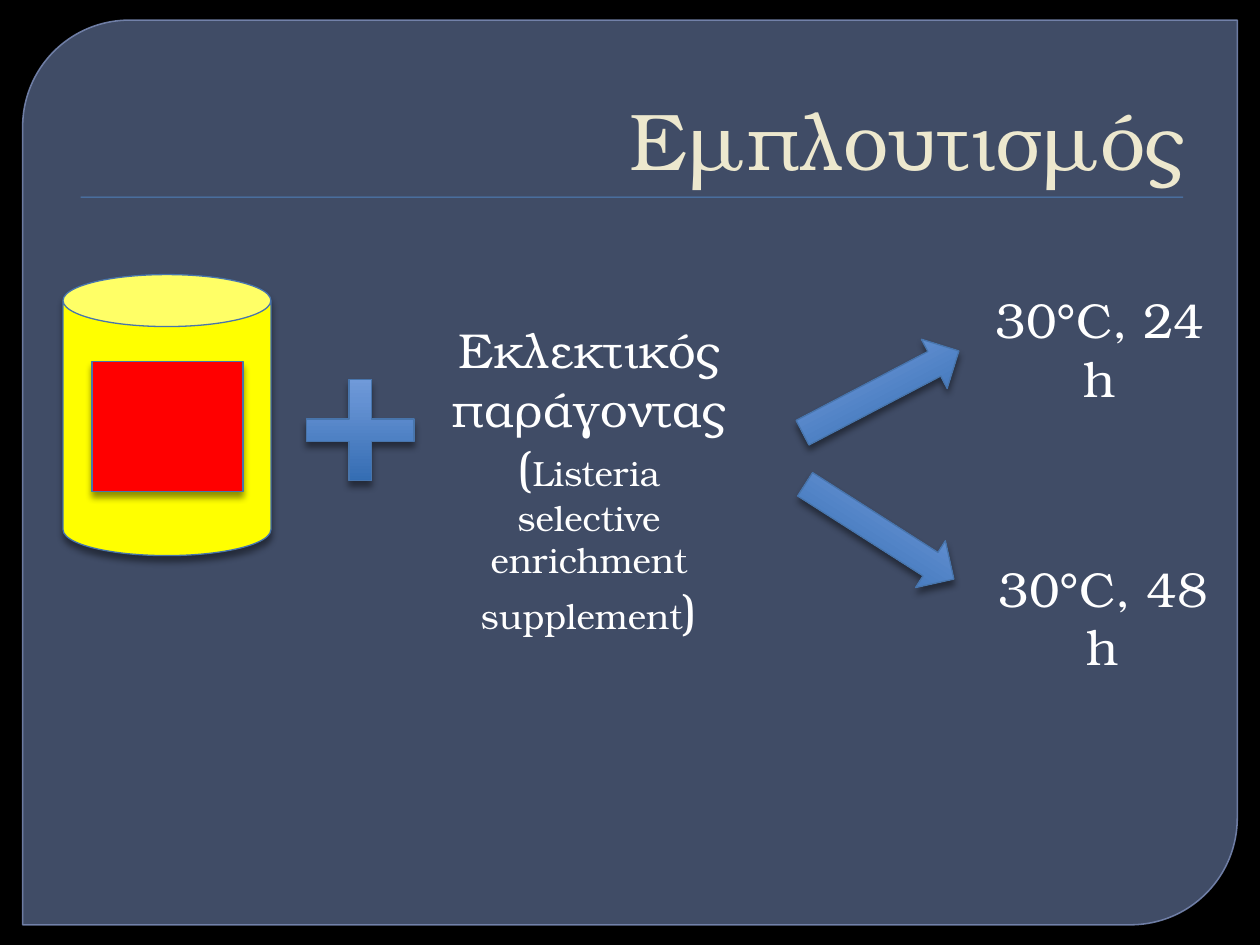
"""Build the enrichment slide: sample plus selective agent, incubated for 24 or 48 hours."""
from lxml import etree
from pptx import Presentation
from pptx.dml.color import RGBColor
from pptx.enum.shapes import MSO_SHAPE
from pptx.enum.text import MSO_ANCHOR, MSO_AUTO_SIZE, PP_ALIGN
from pptx.oxml import parse_xml
from pptx.oxml.ns import nsdecls, qn
from pptx.util import Inches, Pt

CAN, PLUS, ARROW = MSO_SHAPE.CAN, MSO_SHAPE.MATH_PLUS, MSO_SHAPE.RIGHT_ARROW
RECTANGLE, PANEL = MSO_SHAPE.RECTANGLE, MSO_SHAPE.ROUND_2_DIAG_RECTANGLE
CENTER, RIGHT = PP_ALIGN.CENTER, PP_ALIGN.RIGHT
BOTTOM, TOP = MSO_ANCHOR.BOTTOM, MSO_ANCHOR.TOP
FIT_SHAPE, FIT_NONE = MSO_AUTO_SIZE.SHAPE_TO_FIT_TEXT, MSO_AUTO_SIZE.NONE

FONT = "TeX Gyre Bonum"
COLORS = {
    "background": "000000", "panel": "63759D", "panel_line": "7989B3", "rule": "4F81BD",
    "title": "EDE8CE", "text": "FFFFFF", "outline": "4875AC", "shadow": "000000",
    "jar": "FFFF00", "sample": "FF0000",
}
GRADIENT = [(0, "2964AB"), (72, "6592D3"), (100, "7BA1DE")]
TITLE = "Εμπλουτισμός"
LABELS = [
    ((7.8, 2.25, 1.86, 0.57), [("30°C, 24 h", 28)]),
    ((7.74, 4.38, 2.03, 0.57), [("30°C, 48 h", 28)]),
    ((3.44, 2.49, 2.47, 2.32), [
        ("Εκλεκτικός παράγοντας (", 28),
        ("Listeria selective enrichment supplement", 20),
        (")", 28),
    ]),
]
JAR_PARTS = [
    (CAN, (0.5, 2.18, 1.65, 2.23), "jar"),
    (RECTANGLE, (0.73, 2.87, 1.2, 1.03), "sample"),
]
SYMBOLS = [
    (ARROW, (6.29, 2.89, 1.4, 0.44), 332.4),
    (ARROW, (6.28, 4, 1.4, 0.44), 32.5),
    (PLUS, (2.28, 2.87, 1.16, 1.09), 0),
]


def color(name):
    return RGBColor.from_string(COLORS[name])


def set_alpha(fill_element, percent):
    hue = fill_element.find(".//" + qn("a:srgbClr"))
    etree.SubElement(hue, qn("a:alpha")).set("val", str(percent * 1000))


def add_shape(shapes, kind, box, fill, line=None, width=0.75):
    shape = shapes.add_shape(kind, *map(Inches, box))
    shape.fill.solid()
    shape.fill.fore_color.rgb = color(fill)
    if line:
        shape.line.color.rgb = color(line)
        shape.line.width = Pt(width)
    else:
        shape.line.fill.background()
    shape.shadow.inherit = False
    return shape


def add_shadow(shape, alpha, blur, distance):
    effects = shape.element.spPr.find(qn("a:effectLst"))
    effects.append(parse_xml(
        f'<a:outerShdw {nsdecls("a")} blurRad="{Pt(blur)}" dist="{Pt(distance)}" dir="5400000" '
        f'rotWithShape="0"><a:srgbClr val="{COLORS["shadow"]}"><a:alpha val="{alpha * 1000}"/>'
        "</a:srgbClr></a:outerShdw>"))


def set_gradient(shape):
    stops = "".join(f'<a:gs pos="{position * 1000}"><a:srgbClr val="{hue}"/></a:gs>'
                    for position, hue in GRADIENT)
    properties = shape.element.spPr
    properties.replace(properties.find(qn("a:solidFill")), parse_xml(
        f'<a:gradFill {nsdecls("a")} rotWithShape="1"><a:gsLst>{stops}</a:gsLst>'
        '<a:lin ang="16200000" scaled="0"/></a:gradFill>'))


def write_text(shape, runs, hue, alignment, anchor, fit):
    frame = shape.text_frame
    frame.word_wrap = True
    frame.auto_size = fit
    frame.vertical_anchor = anchor
    paragraph = frame.paragraphs[0]
    paragraph.alignment = alignment
    for text, size in runs:
        run = paragraph.add_run()
        run.text = text
        run.font.name = FONT
        run.font.size = Pt(size)
        run.font.color.rgb = color(hue)
    return paragraph


def add_frame(slide):
    panel = add_shape(slide.shapes, PANEL, (0.18, 0.16, 9.64, 7.18), "panel", "panel_line", 0.87)
    panel.adjustments[0] = 0.118
    properties = panel.element.spPr
    set_alpha(properties.find(qn("a:solidFill")), 65)
    set_alpha(properties.find(qn("a:ln")), 88)
    rule = add_shape(slide.shapes, RECTANGLE, (0.64, 1.56, 8.75, 0.01), "rule")
    add_shadow(rule, 75, 1, 1)


def add_title(slide):
    title = slide.shapes.title
    title.left, title.top, title.width, title.height = map(Inches, (0.5, 0.28, 9, 1.25))
    paragraph = write_text(title, [(TITLE, 46)], "title", RIGHT, BOTTOM, FIT_NONE)
    paragraph._p.get_or_add_pPr().set("marL", str(Inches(0.06)))
    slide.shapes[-1].element.addnext(title.element)


def main():
    presentation = Presentation()
    presentation.slide_width, presentation.slide_height = Inches(10), Inches(7.5)
    slide = presentation.slides.add_slide(presentation.slide_layouts[5])
    slide.background.fill.solid()
    slide.background.fill.fore_color.rgb = color("background")
    add_frame(slide)
    add_title(slide)
    jar = slide.shapes.add_group_shape()
    for kind, box, fill in JAR_PARTS:
        add_shadow(add_shape(jar.shapes, kind, box, fill, "outline"), 43, 4, 3)
    for kind, box, rotation in SYMBOLS:
        symbol = add_shape(slide.shapes, kind, box, "rule", "outline")
        symbol.rotation = rotation
        if kind == PLUS:
            symbol.adjustments[0] = 0.165
        set_gradient(symbol)
        add_shadow(symbol, 43, 4, 3)
    for box, runs in LABELS:
        label = slide.shapes.add_textbox(*map(Inches, box))
        write_text(label, runs, "text", CENTER, TOP, FIT_SHAPE)
    presentation.save("out.pptx")


if __name__ == "__main__":
    main()
